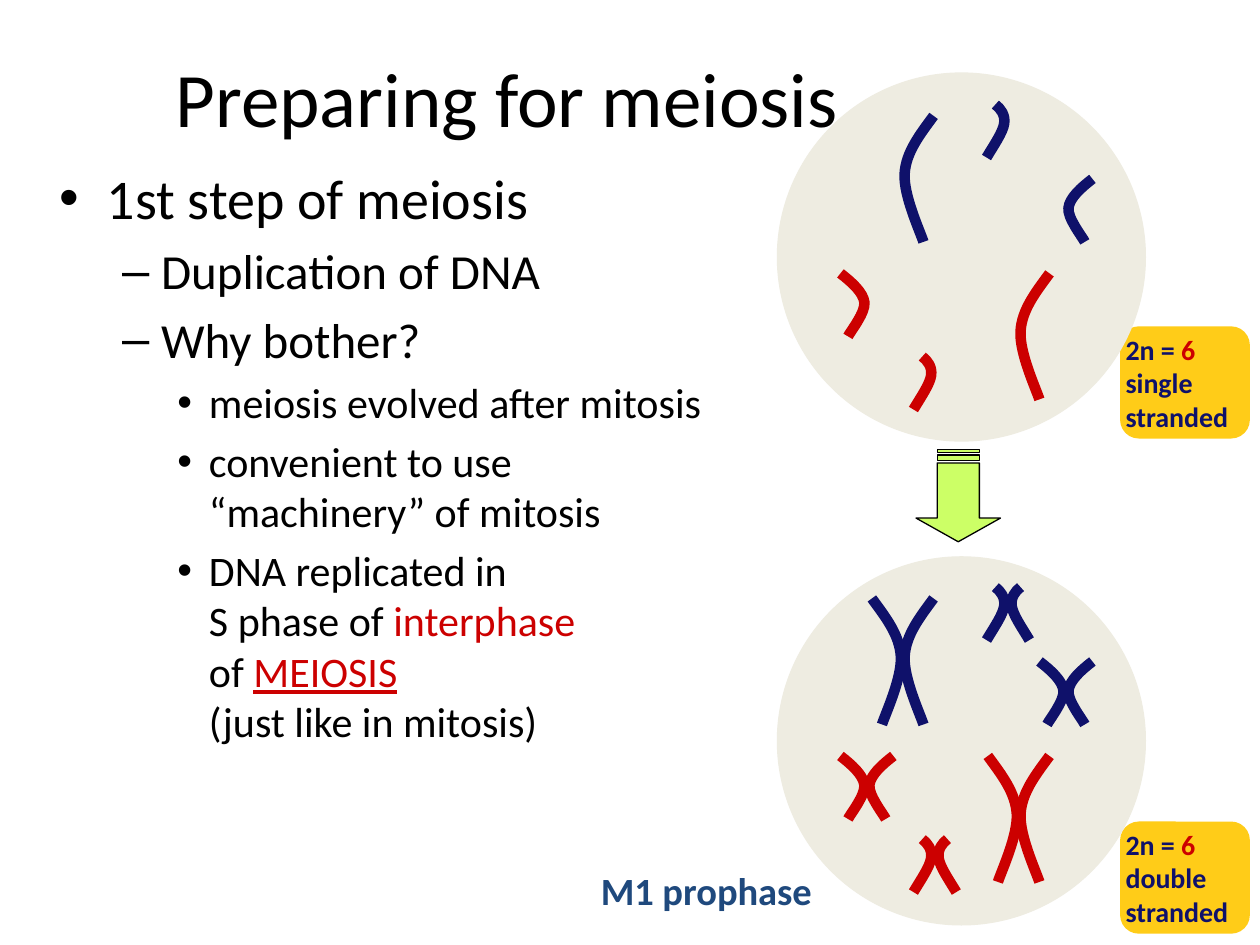
"""Build the slide on preparing for meiosis."""
from dataclasses import dataclass

from lxml import etree
from pptx import Presentation
from pptx.dml.color import RGBColor
from pptx.enum import shapes as sh, text as tx
from pptx.oxml.ns import qn
from pptx.util import Inches, Pt

NAVY = RGBColor(0x0F, 0x11, 0x6A)
RED = RGBColor(0xCC, 0x00, 0x00)
BLACK = RGBColor(0, 0, 0)
BLUE = RGBColor(0x1F, 0x49, 0x7D)
GOLD = RGBColor(0xFF, 0xCC, 0x18)
CREAM = RGBColor(0xEE, 0xEC, 0xE1)
LIME = RGBColor(0xCC, 0xFF, 0x66)
DROP = 3.83


@dataclass(frozen=True)
class Form:
    """Bezier points of a strand that bulges right, and its sister's gap."""
    pts: tuple
    gap: float


LONG = Form(((0, 0), (.11, .15), (.22, .29), (.23, .46),
             (.24, .63), (.11, .91), (.08, 1)), .49)
MID = Form(((0, 0), (.09, .07), (.18, .15), (.19, .23),
            (.2, .31), (.08, .46), (.06, .5)), .42)
SMALL = Form(((0, .42), (.06, .32), (.13, .22), (.14, .15),
              (.15, .08), (.11, .03), (.07, 0)), .34)


@dataclass(frozen=True)
class Strand:
    """A strand with its origin, bulge side (1 right, -1 left) and colour."""
    form: Form
    x: float
    y: float
    side: int
    color: RGBColor


@dataclass(frozen=True)
class Level:
    """Look of one outline level."""
    size: int
    left: float
    hang: float
    mark: str


STRANDS = (
    Strand(LONG, 7.41, .92, -1, NAVY),
    Strand(LONG, 8.33, 2.17, -1, RED),
    Strand(MID, 6.67, 2.17, 1, RED),
    Strand(MID, 8.67, 1.42, -1, NAVY),
    Strand(SMALL, 7.83, .83, 1, NAVY),
    Strand(SMALL, 7.25, 2.83, 1, RED),
)
LEVELS = (Level(32, .38, .38, "•"), Level(28, .81, .31, "–"),
          Level(24, 1.19, .25, "•"))
POINTS = (
    (0, (("1st step of meiosis", BLACK, False),)),
    (1, (("Duplication of DNA", BLACK, False),)),
    (1, (("Why bother?", BLACK, False),)),
    (2, (("meiosis evolved after mitosis", BLACK, False),)),
    (2, (("convenient to use \n“machinery” of mitosis", BLACK, False),)),
    (2, (("DNA replicated in \nS phase of ", BLACK, False),
         ("interphase \n", RED, False),
         ("of ", BLACK, False),
         ("MEIOSIS\n", RED, True),
         ("(just like in mitosis)", BLACK, False))),
)


def write(para, words: str, size: int, color: RGBColor,
          bold: bool = False, under: bool = False) -> None:
    """Add words as runs, with a line break at each newline."""
    for num, part in enumerate(words.split("\n")):
        if num:
            para.add_line_break()
        if part:
            run = para.add_run()
            run.text = part
            font = run.font
            font.name, font.size, font.bold = "Calibri", Pt(size), bold
            font.underline = under
            font.color.rgb = color


def block(slide, kind, box: tuple, fill: RGBColor, line=None):
    """Add a filled preset shape."""
    shape = slide.shapes.add_shape(kind, *map(Inches, box))
    shape.shadow.inherit = False
    shape.fill.solid()
    shape.fill.fore_color.rgb = fill
    if line is None:
        shape.line.fill.background()
    else:
        shape.line.color.rgb = line
        shape.line.width = Pt(.75)
    return shape


def tag(slide, top: float, kind: str) -> None:
    """Add a gold tag that counts the chromosomes."""
    shape = block(slide, sh.MSO_SHAPE.ROUNDED_RECTANGLE,
                  (8.89, top, 1.03, .89), GOLD)
    frame = shape.text_frame
    frame.word_wrap = False
    frame.auto_size = tx.MSO_AUTO_SIZE.SHAPE_TO_FIT_TEXT
    frame.vertical_anchor = tx.MSO_ANCHOR.MIDDLE
    frame.margin_left = frame.margin_right = 0
    frame.margin_top = frame.margin_bottom = 0
    rows = ((("2n = ", NAVY), ("6", RED)), ((kind, NAVY),),
            (("stranded", NAVY),))
    for num, row in enumerate(rows):
        para = frame.add_paragraph() if num else frame.paragraphs[0]
        para.alignment = tx.PP_ALIGN.LEFT
        for words, color in row:
            write(para, words, 16, color, bold=True)


def outline(slide) -> None:
    """Add the bulleted outline."""
    box = slide.shapes.add_textbox(*map(Inches, (.37, 1.25, 6.58, 5.42)))
    frame = box.text_frame
    frame.word_wrap = True
    for num, (depth, runs) in enumerate(POINTS):
        para = frame.add_paragraph() if num else frame.paragraphs[0]
        look = LEVELS[depth]
        para.level = depth
        para.space_before = Pt(look.size * .2)
        props = para._p.get_or_add_pPr()
        props.set("marL", str(Inches(look.left)))
        props.set("indent", str(-Inches(look.hang)))
        etree.SubElement(props, qn("a:buFont")).set("typeface", "Arial")
        etree.SubElement(props, qn("a:buChar")).set("char", look.mark)
        for words, color, under in runs:
            write(para, words, look.size, color, under=under)


def draw(host, item: Strand, drop: float = 0, sister: bool = False) -> None:
    """Draw a strand of two Bezier arcs, or the sister that mirrors it."""
    x = item.x + (item.side * item.form.gap if sister else 0)
    side = -item.side if sister else item.side
    pts = [(Inches(x + side * dx), Inches(item.y + drop + dy))
           for dx, dy in item.form.pts]
    knots = pts[::3]
    pen = host.shapes.build_freeform(*knots[0])
    pen.add_line_segments(knots[1:], close=False)
    shape = pen.convert_to_shape()
    left, top = (min(axis) for axis in zip(*knots))
    lines = list(shape._element.iter(qn("a:lnTo")))
    for num, line in enumerate(lines):
        arc = etree.Element(qn("a:cubicBezTo"))
        for px, py in pts[3 * num + 1:3 * num + 4]:
            point = etree.SubElement(arc, qn("a:pt"))
            point.set("x", str(px - left))
            point.set("y", str(py - top))
        line.getparent().replace(line, arc)
    shape.shadow.inherit = False
    shape.fill.background()
    shape.line.color.rgb = item.color
    shape.line.width = Pt(6)


def main() -> None:
    """Build and save the slide."""
    deck = Presentation()
    deck.slide_width, deck.slide_height = Inches(10), Inches(7.5)
    slide = deck.slides.add_slide(deck.slide_layouts[5])

    tag(slide, 6.52, "double")
    tag(slide, 2.59, "single")

    title = slide.shapes.title
    title.left, title.top = Inches(.22), Inches(.28)
    title.width, title.height = Inches(7.61), Inches(.97)
    title.text_frame.vertical_anchor = tx.MSO_ANCHOR.MIDDLE
    para = title.text_frame.paragraphs[0]
    para.alignment = tx.PP_ALIGN.CENTER
    write(para, "Preparing for meiosis", 44, BLACK)
    outline(slide)

    for top in (.58, 4.42):
        block(slide, sh.MSO_SHAPE.OVAL, (6.17, top, 2.92, 2.92), CREAM, CREAM)

    note = slide.shapes.add_textbox(*map(Inches, (4.67, 6.83, 2.09, .47)))
    note.text_frame.word_wrap = False
    note.text_frame.auto_size = tx.MSO_AUTO_SIZE.SHAPE_TO_FIT_TEXT
    note.text_frame.vertical_anchor = tx.MSO_ANCHOR.MIDDLE
    write(note.text_frame.paragraphs[0], "M1 prophase", 22, BLUE, bold=True)

    for item in STRANDS:
        pair = slide.shapes.add_group_shape()
        draw(pair, item, DROP, sister=True)
        draw(pair, item, DROP)
    for item in STRANDS:
        draw(slide, item)

    arrow = block(slide, sh.MSO_SHAPE.STRIPED_RIGHT_ARROW,
                  (7.24, 3.6, .73, .67), LIME, BLACK)
    arrow.adjustments[0], arrow.adjustments[1] = .5, .28
    arrow.rotation = 90
    deck.save("out.pptx")


if __name__ == "__main__":
    main()
